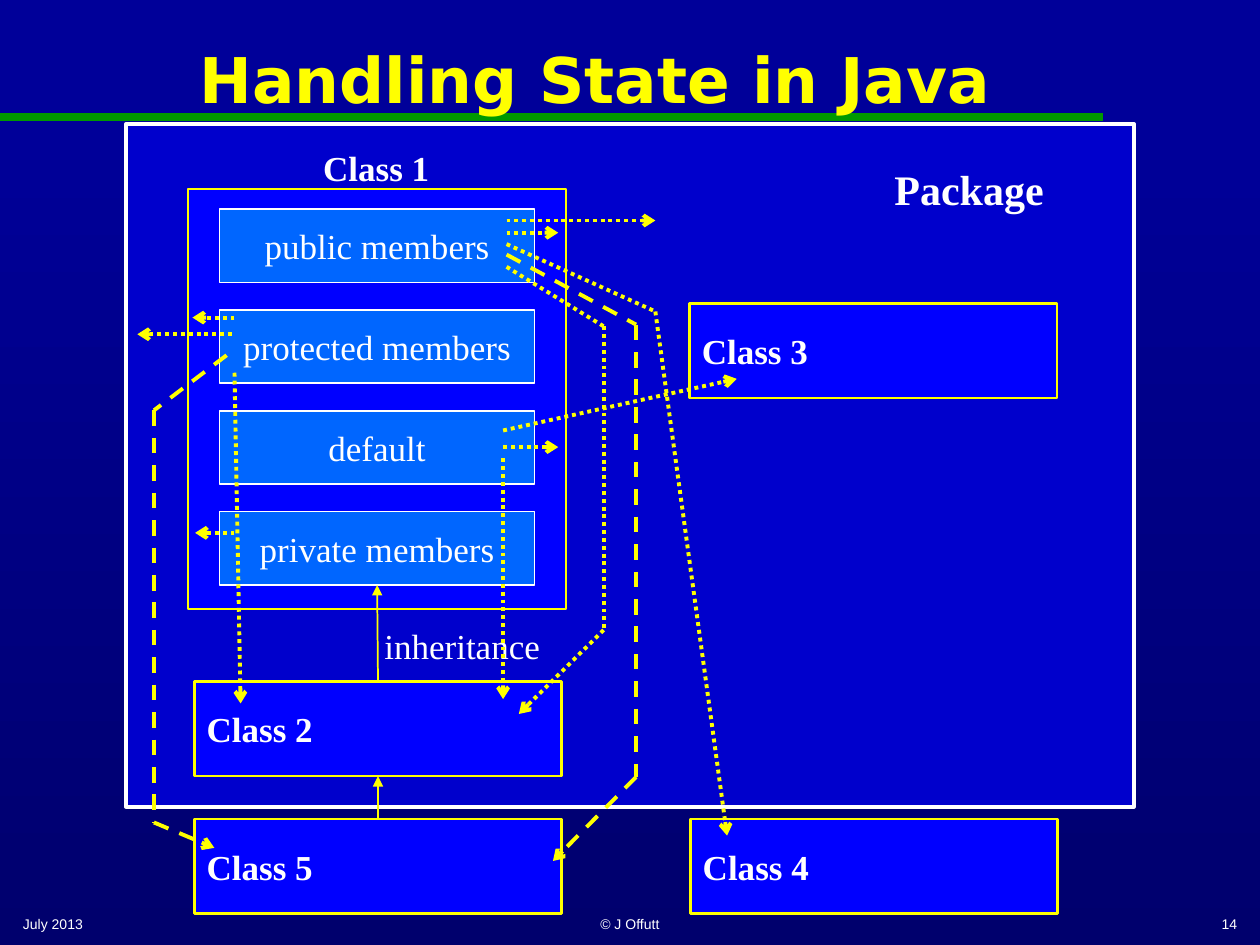
from itertools import pairwise
from lxml.etree import SubElement
from pptx import Presentation
from pptx.dml.color import RGBColor
from pptx.enum.dml import MSO_LINE
from pptx.enum.shapes import MSO_CONNECTOR, MSO_SHAPE
from pptx.enum.text import MSO_ANCHOR, PP_ALIGN
from pptx.oxml.ns import qn
from pptx.util import Pt

WHITE, YELLOW, BLUE = "FFFFFF", "FFFF00", "0000FF"
LEFT, MID, RIGHT = PP_ALIGN.LEFT, PP_ALIGN.CENTER, PP_ALIGN.RIGHT
DOT, DASH = MSO_LINE.ROUND_DOT, MSO_LINE.DASH


def paint(color, code):
    color.rgb = RGBColor.from_string(code)


def put(shape, words, size=20, face="Times New Roman", color=WHITE,
        bold=False, align=MID, wrap=False):
    frame = shape.text_frame
    frame.word_wrap = wrap
    frame.vertical_anchor = MSO_ANCHOR.MIDDLE
    para = frame.paragraphs[0]
    para.text = words
    para.alignment = align
    font = para.font
    font.size, font.name, font.bold = Pt(size), face, bold
    paint(font.color, color)


def label(slide, words, x, y, w, h, **look):
    area = slide.shapes.add_textbox(Pt(x), Pt(y), Pt(w), Pt(h))
    put(area, words, **look)


def box(slide, x, y, w, h, fill, edge, width):
    rect = slide.shapes.add_shape(
        MSO_SHAPE.RECTANGLE, Pt(x), Pt(y), Pt(w), Pt(h))
    rect.shadow.inherit = False
    rect.fill.solid()
    paint(rect.fill.fore_color, fill)
    paint(rect.line.color, edge)
    rect.line.width = Pt(width)
    return rect


def group(slide, words, x, y):
    rect = box(slide, x, y, 210, 54, BLUE, YELLOW, 1.5)
    put(rect, words, bold=True, align=LEFT)
    return rect


def link(slide, start, end, width=2.25, color=YELLOW, dash=None, tip=None):
    line = slide.shapes.add_connector(
        MSO_CONNECTOR.STRAIGHT, *map(Pt, start + end))
    paint(line.line.color, color)
    line.line.width = Pt(width)
    if dash:
        line.line.dash_style = dash
    props = line._element.spPr
    if tip:
        SubElement(props.find(qn("a:ln")), qn("a:tailEnd"), type=tip)
    SubElement(props, qn("a:effectLst"))
    return line


def route(slide, dash, *stops):
    for start, end in pairwise(stops):
        tip = "arrow" if end == stops[-1] else None
        link(slide, start, end, dash=dash, tip=tip)


def climb(slide, child, above):
    line = link(slide, (0, 0), (0, 0), width=1, tip="triangle")
    line.begin_connect(child, 0)
    line.end_connect(above, 2)


def ground(slide):
    fill = slide.background.fill
    fill.gradient()
    fill.gradient_angle = 270
    for stop, place, code in zip(
            fill.gradient_stops, (0.13, 1), ("000099", "00006D")):
        stop.position = place
        paint(stop.color, code)


def head(slide):
    link(slide, (0, 67), (630, 67), width=4.5, color="009900")
    title = slide.shapes.title
    title.left, title.top = Pt(12), Pt(0)
    title.width, title.height = Pt(656), Pt(90)
    put(title, "Handling State in Java", size=36, face="DejaVu Sans",
        color=YELLOW, bold=True, wrap=True)
    slide.shapes._spTree.append(title._element)


def foot(slide):
    for words, x, w, align in (("July 2013", 6, 150, LEFT),
                               ("© J Offutt", 246, 228, MID),
                               ("14", 564, 150, RIGHT)):
        label(slide, words, x, 516, w, 24, size=8, face="Arial",
              align=align, wrap=True)


def boxes(slide):
    group(slide, "Class 4", 394.5, 468)
    head(slide)
    box(slide, 72, 71, 576, 390, "0000CC", WHITE, 2.25)
    box(slide, 107.5, 108, 216, 240, BLUE, YELLOW, 1.5)
    label(slide, "Class 1", 173, 80, 84, 31, bold=True)
    label(slide, "inheritance", 212.5, 353.5, 112, 31, align=LEFT)
    label(slide, "Package", 504, 90, 112, 36, size=24, bold=True, align=LEFT)
    group(slide, "Class 3", 394, 173.5)
    second = group(slide, "Class 2", 111, 389.5)
    fifth = group(slide, "Class 5", 111, 468)
    names = "public members", "protected members", "default", "private members"
    for row, name in enumerate(names):
        part = box(slide, 125.5, 119.5 + 57.6 * row, 180, 42,
                   "0066FF", WHITE, 1)
        put(part, name)
    climb(slide, second, part)
    climb(slide, fifth, second)


def routes(slide):
    for dash, *stops in (
        (DOT, (134, 304.5), (111.5, 304.5)),
        (DOT, (132.5, 191), (78.5, 191)),
        (DOT, (134, 181.5), (110, 181.5)),
        (DOT, (134, 213), (137.5, 402)),
        (DOT, (289.5, 133), (319, 133)),
        (DOT, (289.5, 126), (374.5, 126)),
        (DOT, (289.5, 139.5), (374.5, 178), (415.5, 477.5)),
        (DASH, (129.5, 203), (88, 234.5), (88, 470), (122.5, 484.5)),
        (DOT, (287.5, 262), (287.5, 399.5)),
        (DOT, (287.5, 255.5), (319, 255.5)),
        (DOT, (287.5, 246), (421, 216.5)),
        (DASH, (289.5, 145.5), (363.5, 185.5), (363.5, 444), (316, 492)),
        (DOT, (289.5, 152.5), (345, 186.5), (345, 360), (296.5, 408)),
    ):
        route(slide, dash, *stops)


def main():
    deck = Presentation()
    deck.slide_width, deck.slide_height = Pt(720), Pt(540)
    slide = deck.slides.add_slide(deck.slide_layouts[5])
    ground(slide)
    boxes(slide)
    routes(slide)
    foot(slide)
    deck.save("out.pptx")


if __name__ == "__main__":
    main()
